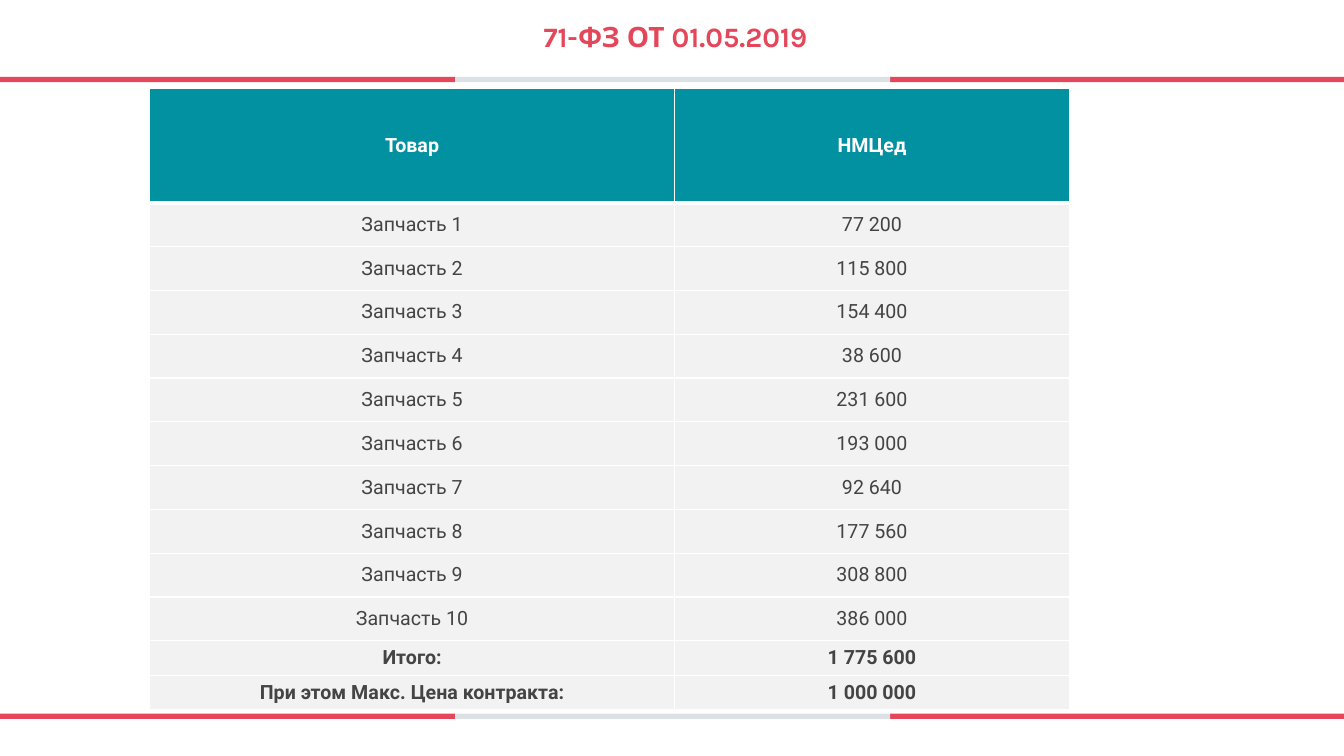
from lxml import etree
from pptx import Presentation
from pptx.dml.color import RGBColor
from pptx.enum.shapes import MSO_SHAPE
from pptx.enum.text import MSO_ANCHOR, PP_ALIGN
from pptx.oxml.ns import qn
from pptx.util import Pt

RECT = MSO_SHAPE.RECTANGLE
CENTER, MIDDLE = PP_ALIGN.CENTER, MSO_ANCHOR.MIDDLE
COLORS = {"red": "E4465A", "gray": "DBE1E4", "teal": "0291A0",
          "row": "F2F2F2", "text": "444444", "white": "FFFFFF"}


def rgb(name):
    return RGBColor.from_string(COLORS[name])


def write(tf, text, size=14, font="Roboto", color="text", bold=False, spacing=None):
    p = tf.paragraphs[0]
    p.alignment = CENTER
    p.line_spacing = spacing
    r = p.add_run()
    r.text = text
    r.font.size, r.font.name, r.font.bold = Pt(size), font, bold
    r.font.color.rgb = rgb(color)


prs = Presentation()
prs.slide_width, prs.slide_height = Pt(960), Pt(540)
s = prs.slides.add_slide(prs.slide_layouts[5])

# Divider bands above and below the table
for top in (54.9, 509.8):
    for left, right, color in ((0, 325.2, "red"), (635.8, 960, "red"), (325.2, 635.8, "gray")):
        band = s.shapes.add_shape(RECT, Pt(left), Pt(top), Pt(right - left), Pt(3.7))
        band.shadow.inherit = False
        band.fill.solid()
        band.fill.fore_color.rgb = rgb(color)
        band.line.fill.background()

title = s.shapes.title
title.left, title.top, title.width, title.height = Pt(154), Pt(0), Pt(657), Pt(54.7)
title.text_frame.vertical_anchor = MIDDLE
write(title.text_frame, "71-ФЗ ОТ 01.05.2019", size=20, font="Karla",
      color="red", bold=True, spacing=0.9)

prices = ["77 200", "115 800", "154 400", "38 600", "231 600",
          "193 000", "92 640", "177 560", "308 800", "386 000"]
rows = [("Товар", "НМЦед")]
rows += [(f"Запчасть {n}", price) for n, price in enumerate(prices, 1)]
rows += [("Итого:", "1 775 600"), ("При этом Макс. Цена контракта:", "1 000 000")]
heights = [81.4] + [31.3] * len(prices) + [24.6] * 2

table = s.shapes.add_table(len(rows), 2, Pt(106.9), Pt(63.4), Pt(657), Pt(sum(heights))).table
for col, width in zip(table.columns, (375, 282)):
    col.width = Pt(width)

for i, (values, height) in enumerate(zip(rows, heights)):
    table.rows[i].height = Pt(height)
    header = i == 0
    total = i > len(prices)
    for j, value in enumerate(values):
        cell = table.cell(i, j)
        cell.vertical_anchor = MIDDLE
        tcPr = cell._tc.get_or_add_tcPr()
        for side in ("L", "R", "T", "B"):
            thick = (i, side) in ((0, "B"), (1, "T"))
            ln = etree.SubElement(tcPr, qn(f"a:ln{side}"), w=str(Pt(3 if thick else 1)))
            fill = etree.SubElement(ln, qn("a:solidFill"))
            etree.SubElement(fill, qn("a:srgbClr"), val=COLORS["white"])
        cell.fill.solid()
        cell.fill.fore_color.rgb = rgb("teal" if header else "row")
        write(cell.text_frame, value, color="white" if header else "text",
              bold=header or total)

prs.save("out.pptx")
